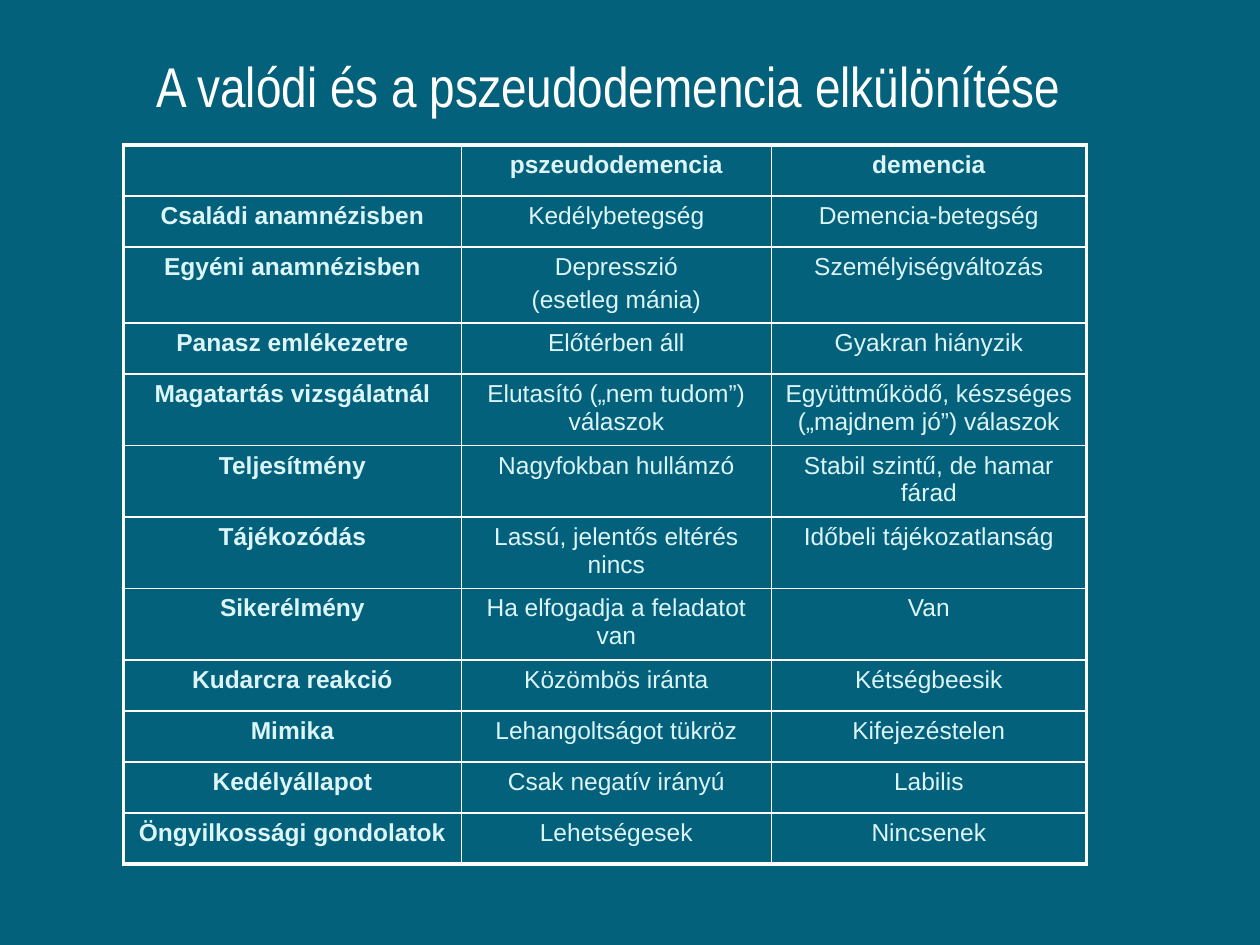
from lxml.etree import SubElement
from pptx import Presentation
from pptx.dml.color import RGBColor
from pptx.enum.text import MSO_ANCHOR, MSO_AUTO_SIZE, PP_ALIGN
from pptx.oxml.ns import qn
from pptx.util import Cm, Pt

BACKGROUND = RGBColor(0x04, 0x61, 0x7B)
WHITE = RGBColor(0xFF, 0xFF, 0xFF)
PALE = RGBColor(0xDB, 0xF5, 0xF9)

THIN, THICK = Pt(1), Pt(2.25)
COL_WIDTHS = [6.81, 6.25, 6.35]
ONE_LINE, TWO_LINES, TWO_PARAGRAPHS = 1.03, 1.44, 1.53

# Row height in cm, then the cell texts; a line break starts a new paragraph
ROWS = [
    (ONE_LINE, "", "pszeudodemencia", "demencia"),
    (ONE_LINE, "Családi anamnézisben", "Kedélybetegség", "Demencia-betegség"),
    (TWO_PARAGRAPHS, "Egyéni anamnézisben", "Depresszió\n(esetleg mánia)",
     "Személyiségváltozás"),
    (ONE_LINE, "Panasz emlékezetre", "Előtérben áll", "Gyakran hiányzik"),
    (TWO_LINES, "Magatartás vizsgálatnál", "Elutasító („nem tudom”) válaszok",
     "Együttműködő, készséges („majdnem jó”) válaszok"),
    (TWO_LINES, "Teljesítmény", "Nagyfokban hullámzó",
     "Stabil szintű, de hamar fárad"),
    (TWO_LINES, "Tájékozódás", "Lassú, jelentős eltérés nincs",
     "Időbeli tájékozatlanság"),
    (TWO_LINES, "Sikerélmény", "Ha elfogadja a feladatot van", "Van"),
    (ONE_LINE, "Kudarcra reakció", "Közömbös iránta", "Kétségbeesik"),
    (ONE_LINE, "Mimika", "Lehangoltságot tükröz", "Kifejezéstelen"),
    (ONE_LINE, "Kedélyállapot", "Csak negatív irányú", "Labilis"),
    (ONE_LINE, "Öngyilkossági gondolatok", "Lehetségesek", "Nincsenek"),
]


def add_run(p, text, font, size, color, bold=False):
    r = p.add_run()
    r.text = text
    r.font.name = font
    r.font.size = Pt(size)
    r.font.bold = bold
    r.font.color.rgb = color


def set_title(slide, text):
    sp = slide.shapes.title
    sp.left, sp.top, sp.width, sp.height = Cm(2.9), Cm(0.91), Cm(21.54), Cm(1.63)
    tf = sp.text_frame
    tf.word_wrap = True
    tf.auto_size = MSO_AUTO_SIZE.NONE
    tf.vertical_anchor = MSO_ANCHOR.TOP
    p = tf.paragraphs[0]
    p.alignment = PP_ALIGN.LEFT
    add_run(p, text, "Arial Narrow", 32, WHITE)


def set_borders(cell, widths):
    tc_pr = cell._tc.get_or_add_tcPr()
    for side, width in widths.items():
        ln = SubElement(tc_pr, qn(f"a:ln{side}"), w=str(width))
        fill = SubElement(ln, qn("a:solidFill"))
        SubElement(fill, qn("a:srgbClr"), val=str(WHITE))


def fill_cell(cell, text, bold):
    tf = cell.text_frame
    for i, line in enumerate(text.split("\n") if text else []):
        p = tf.add_paragraph() if i else tf.paragraphs[0]
        p.alignment = PP_ALIGN.CENTER
        if i:
            p.space_before = Pt(2.8)
        add_run(p, line, "Arial", 14, PALE, bold)


def add_comparison(slide):
    last_row, last_col = len(ROWS) - 1, len(COL_WIDTHS) - 1
    height = sum(row[0] for row in ROWS)
    table = slide.shapes.add_table(
        len(ROWS), len(COL_WIDTHS), Cm(2.49), Cm(2.92),
        Cm(sum(COL_WIDTHS)), Cm(height)).table
    table.first_row = table.horz_banding = False
    for col, width in zip(table.columns, COL_WIDTHS):
        col.width = Cm(width)

    for i, (row_height, *texts) in enumerate(ROWS):
        table.rows[i].height = Cm(row_height)
        for j, text in enumerate(texts):
            cell = table.cell(i, j)
            fill_cell(cell, text, bold=i == 0 or j == 0)
            # Thick lines run only round the outer frame
            set_borders(cell, {
                "L": THICK if j == 0 else THIN,
                "R": THICK if j == last_col else THIN,
                "T": THICK if i == 0 else THIN,
                "B": THICK if i == last_row else THIN,
            })
            cell.fill.background()


def main():
    prs = Presentation()
    prs.slide_width, prs.slide_height = Cm(25.4), Cm(19.05)
    slide = prs.slides.add_slide(prs.slide_layouts[5])
    slide.background.fill.solid()
    slide.background.fill.fore_color.rgb = BACKGROUND

    set_title(slide, "A valódi és a pszeudodemencia elkülönítése")
    add_comparison(slide)
    prs.save("out.pptx")


if __name__ == "__main__":
    main()
